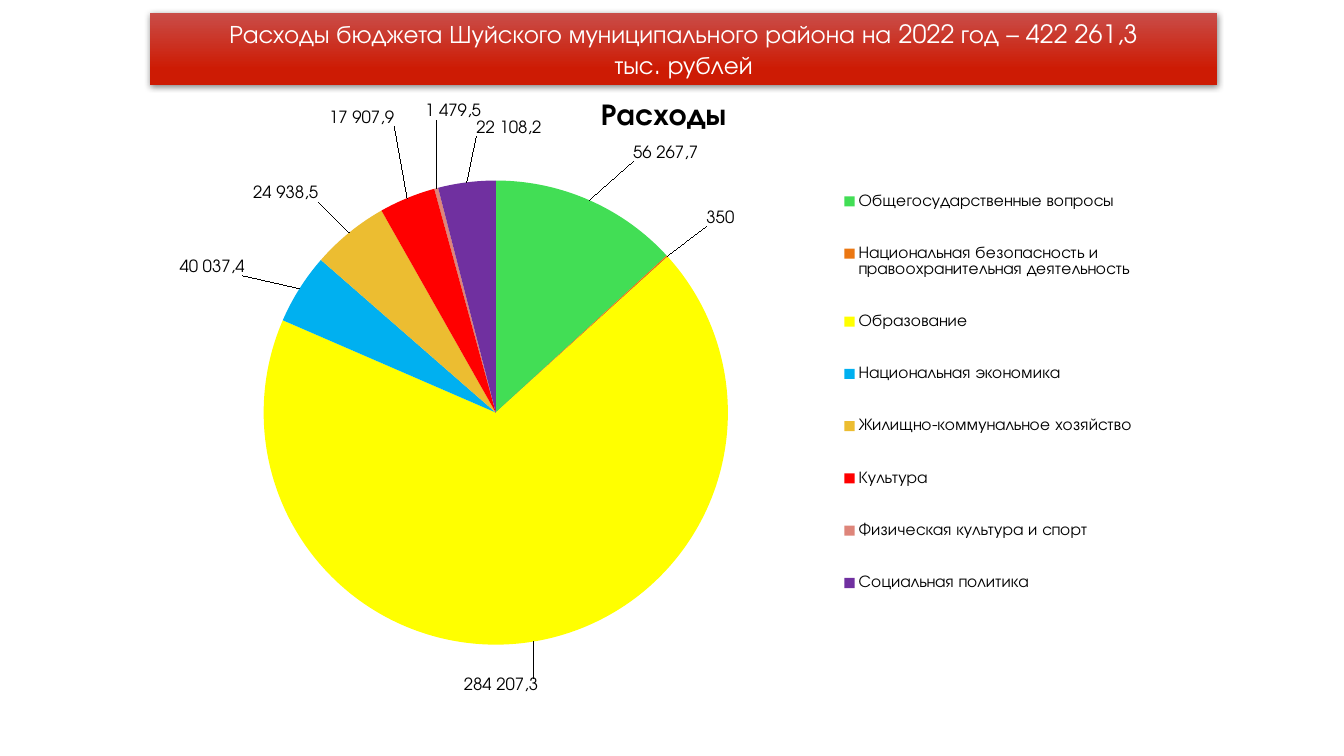
from lxml import etree
from pptx import Presentation
from pptx.chart.data import CategoryChartData
from pptx.dml.color import RGBColor
from pptx.enum.chart import XL_CHART_TYPE, XL_LABEL_POSITION, XL_LEGEND_POSITION
from pptx.enum.shapes import MSO_SHAPE
from pptx.enum.text import MSO_ANCHOR, PP_ALIGN
from pptx.oxml import parse_xml
from pptx.oxml.ns import nsdecls, qn
from pptx.util import Pt

PX = 9144  # 100 px to the inch
FONT = "TeX Gyre Adventor"
BLACK = RGBColor(0x00, 0x00, 0x00)
WHITE = RGBColor(0xFF, 0xFF, 0xFF)
BANNER_TOP = RGBColor(0xC9, 0x4D, 0x48)
BANNER_BOTTOM = RGBColor(0xCD, 0x1B, 0x04)
GREEN = RGBColor(0x42, 0xDE, 0x55)
ORANGE = RGBColor(0xEB, 0x77, 0x12)
YELLOW = RGBColor(0xFF, 0xFF, 0x00)
BLUE = RGBColor(0x00, 0xB0, 0xF0)
GOLD = RGBColor(0xEC, 0xBD, 0x31)
RED = RGBColor(0xFF, 0x00, 0x00)
BRICK = RGBColor(0xC4, 0x22, 0x0D)
PURPLE = RGBColor(0x70, 0x30, 0xA0)

BANNER_LINES = (
    "Расходы бюджета Шуйского муниципального района на 2022 год – 422 261,3",
    "тыс. рублей",
)
# category, value, label, colour, label shift in px
EXPENSES = (
    ("Общегосударственные вопросы", 55614.9, "56 267,7", GREEN, (41, -33)),
    ("Национальная безопасность и правоохранительная деятельность", 452, "350",
     ORANGE, (35, -26)),
    ("Образование", 288131.2, "284 207,3", YELLOW, (-70, 31)),
    ("Национальная экономика", 20738.8, "40 037,4", BLUE, (-52, -10)),
    ("Жилищно-коммунальное хозяйство", 22730.8, "24 938,5", GOLD, (-27, -26)),
    ("Культура", 16547.2, "17 907,9", RED, (-11, -66)),
    ("Физическая культура и спорт", 1175.8, "1 479,5", BRICK, (46, -62)),
    ("Социальная политика", 16870.6, "22 108,2", PURPLE, (75, -40)),
)


def set_font(font, size, color=BLACK, bold=False):
    for name, value in {"name": FONT, "size": Pt(size), "bold": bold}.items():
        setattr(font, name, value)
    font.color.rgb = color


def layout_xml(target=None, **fractions):
    """Manual chart layout; without a target the fractions are shifts."""
    layout = parse_xml(f"<c:layout {nsdecls('c')}><c:manualLayout/></c:layout>")
    manual = layout[0]
    if target:
        settings = {"xMode": "edge", "yMode": "edge"}
        if target == "inner":
            settings = {"layoutTarget": target, **settings}
    else:
        settings = {}
    for name, value in {**settings, **fractions}.items():
        etree.SubElement(manual, qn(f"c:{name}")).set("val", str(value))
    return layout


def add_banner(page, box):
    banner = page.shapes.add_shape(MSO_SHAPE.RECTANGLE, *(PX * n for n in box))
    banner.line.fill.background()
    banner.fill.gradient()
    banner.fill.gradient_angle = 270
    stops = ((0, BANNER_TOP), (0.78, BANNER_BOTTOM))
    for stop, (position, color) in zip(banner.fill.gradient_stops, stops):
        stop.position = position
        stop.color.rgb = color
    banner.shadow.inherit = False
    effects = banner.element.spPr.find(qn("a:effectLst"))
    effects.append(parse_xml(
        f'<a:outerShdw {nsdecls("a")} blurRad="57150" dist="19050" dir="5400000" '
        'algn="ctr" rotWithShape="0"><a:srgbClr val="000000">'
        '<a:alpha val="48000"/></a:srgbClr></a:outerShdw>'))
    frame = banner.text_frame
    frame.word_wrap = True
    frame.vertical_anchor = MSO_ANCHOR.MIDDLE
    for index, line in enumerate(BANNER_LINES):
        para = frame.paragraphs[0] if index == 0 else frame.add_paragraph()
        para.alignment = PP_ALIGN.CENTER
        span = para.add_run()
        span.text = line
        set_font(span.font, 18, WHITE)


def style_slices(series, width, height):
    labels = series.data_labels
    labels.show_value = True
    labels.position = XL_LABEL_POSITION.OUTSIDE_END
    set_font(labels.font, 12)
    for index, (_, _, text, color, (dx, dy)) in enumerate(EXPENSES):
        point = series.points[index]
        point.format.fill.solid()
        point.format.fill.fore_color.rgb = color
        point.format.line.fill.background()
        label = point.data_label
        span = label.text_frame.paragraphs[0].add_run()
        span.text = text
        set_font(span.font, 12)
        label.position = XL_LABEL_POSITION.OUTSIDE_END
        rich = label.text_frame._txBody
        rich.getparent().addprevious(
            layout_xml(x=round(dx / width, 3), y=round(dy / height, 3)))
        if color == BRICK:
            tint = point.format.fill._xPr.find(".//" + qn("a:srgbClr"))
            etree.SubElement(tint, qn("a:alpha")).set("val", "55000")


def add_expense_chart(page, box):
    data = CategoryChartData()
    data.categories = [row[0] for row in EXPENSES]
    data.add_series("Расходы", [row[1] for row in EXPENSES])
    chart = page.shapes.add_chart(
        XL_CHART_TYPE.PIE, *(PX * n for n in box), data).chart
    set_font(chart.font, 18)
    chart.has_title = True
    title = chart.chart_title
    title.include_in_layout = False
    span = title.text_frame.paragraphs[0].add_run()
    span.text = "Расходы"
    set_font(span.font, 21.6, bold=True)

    chart.has_legend = True
    legend = chart.legend
    legend.position = XL_LEGEND_POSITION.RIGHT
    legend.include_in_layout = False
    set_font(legend.font, 12)
    legend._element.find(qn("c:legendPos")).addnext(
        layout_xml("legend", x=0.68, y=0.13, w=0.31, h=0.76))

    plot = chart.plots[0]
    plot.vary_by_categories = True
    area = plot._element.getparent()
    for old in area.findall(qn("c:layout")):
        area.remove(old)
    area.insert(0, layout_xml("inner", x=0.05, y=0.168, w=0.553, h=0.75))
    style_slices(plot.series[0], *box[2:])


def main():
    deck = Presentation()
    deck.slide_width, deck.slide_height = 1333 * PX, 750 * PX
    page = deck.slides.add_slide(deck.slide_layouts[6])
    add_banner(page, (149, 13, 1058, 71))
    add_expense_chart(page, (178, 76, 961, 614))
    deck.save("out.pptx")


if __name__ == "__main__":
    main()
